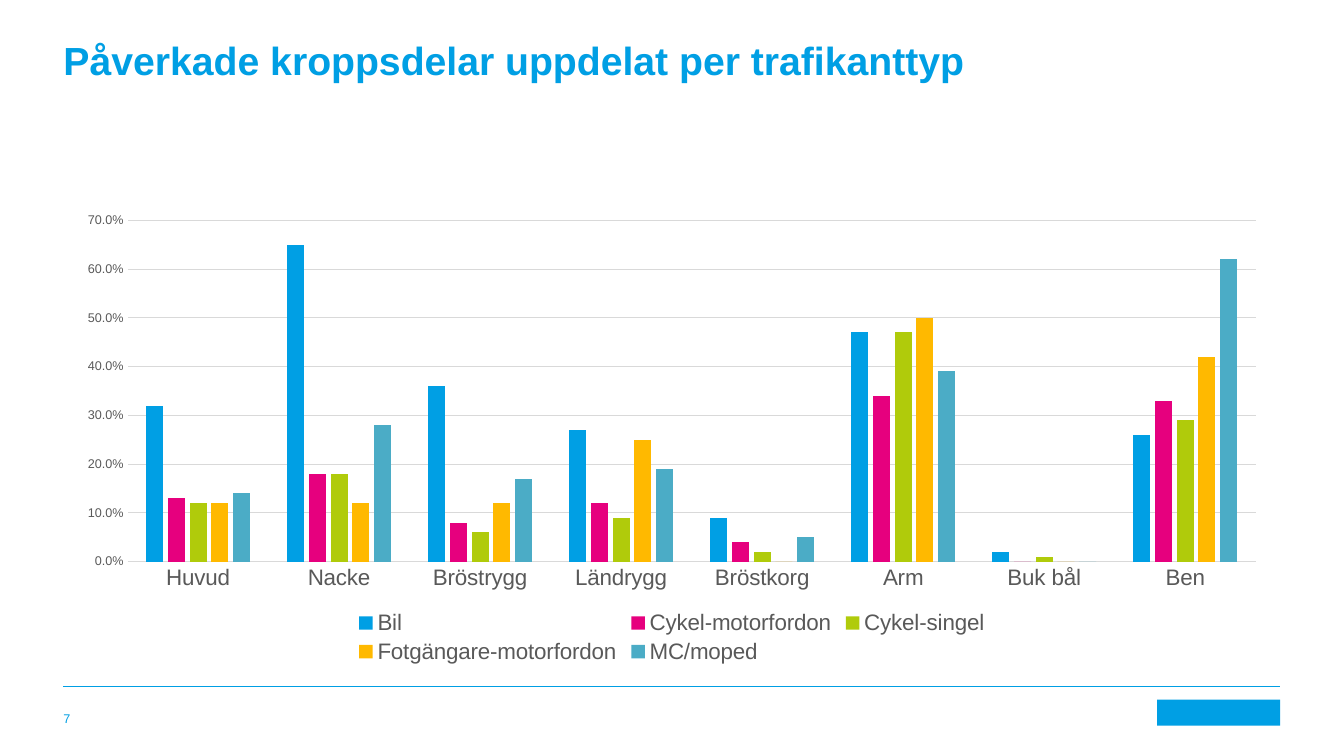
from dataclasses import dataclass

import lxml.etree
import pptx
import pptx.chart.data
import pptx.dml.color
import pptx.enum.chart
import pptx.enum.shapes
import pptx.enum.text
import pptx.oxml.ns
import pptx.util

Pt = pptx.util.Pt
Color = pptx.dml.color.RGBColor


@dataclass(frozen=True)
class Theme:
    font: str = "Arial"
    blue: str = "009FE4"
    text_grey: str = "595959"
    line_grey: str = "D9D9D9"
    title_size: float = 28
    number_size: float = 9
    value_size: float = 9
    label_size: float = 16
    chart_size: float = 10
    rule_width: float = 0.5
    grid_width: float = 0.75


@dataclass(frozen=True)
class Box:
    left: float
    top: float
    width: float
    height: float

    def lengths(self) -> tuple:
        return Pt(self.left), Pt(self.top), Pt(self.width), Pt(self.height)


@dataclass(frozen=True)
class Label:
    text: str
    box: Box
    size: float
    bold: bool
    anchor: pptx.enum.text.MSO_ANCHOR


@dataclass(frozen=True)
class RoadUser:
    name: str
    color: str
    shares: tuple[float, ...]


THEME = Theme()
LEFT, WIDTH = 45.36, 869.04
RULE_TOP = 490.32
FOOTER_TOP, FOOTER_HEIGHT = 499.68, 18.72
CHART_BOX = Box(LEFT, 145.44, WIDTH, 331.92)
LOGO_BOX = Box(826.56, FOOTER_TOP, 87.84, FOOTER_HEIGHT)

LABELS = (
    Label("Påverkade kroppsdelar uppdelat per trafikanttyp", Box(LEFT, 25.92, WIDTH, 118.8),
          THEME.title_size, True, pptx.enum.text.MSO_ANCHOR.TOP),
    Label("7", Box(LEFT, FOOTER_TOP, 41.76, FOOTER_HEIGHT),
          THEME.number_size, False, pptx.enum.text.MSO_ANCHOR.BOTTOM),
)

BODY_PARTS = ("Huvud", "Nacke", "Bröstrygg", "Ländrygg", "Bröstkorg", "Arm", "Buk bål", "Ben")
ROAD_USERS = (
    RoadUser("Bil", THEME.blue, (0.32, 0.65, 0.36, 0.27, 0.09, 0.47, 0.02, 0.26)),
    RoadUser("Cykel-motorfordon", "E6007E", (0.13, 0.18, 0.08, 0.12, 0.04, 0.34, 0, 0.33)),
    RoadUser("Cykel-singel", "B0CB0B", (0.12, 0.18, 0.06, 0.09, 0.02, 0.47, 0.01, 0.29)),
    RoadUser("Fotgängare-motorfordon", "FFB900", (0.12, 0.12, 0.12, 0.25, 0, 0.5, 0, 0.42)),
    RoadUser("MC/moped", "4BACC6", (0.14, 0.28, 0.17, 0.19, 0.05, 0.39, 0, 0.62)),
)


def apply_format(target: object, values: dict) -> None:
    for name, value in values.items():
        setattr(target, name, value)


def style_font(font: pptx.text.text.Font, size: float, color: str, bold: bool = False) -> None:
    apply_format(font, {"name": THEME.font, "size": Pt(size), "bold": bold})
    font.color.rgb = Color.from_string(color)


def style_line(line: pptx.dml.line.LineFormat, color: str, width: float) -> None:
    line.color.rgb = Color.from_string(color)
    line.width = Pt(width)


def fill_solid(fill: pptx.dml.fill.FillFormat, color: str) -> None:
    fill.solid()
    fill.fore_color.rgb = Color.from_string(color)


def add_label(slide: pptx.slide.Slide, label: Label) -> None:
    frame = slide.shapes.add_textbox(*label.box.lengths()).text_frame
    apply_format(frame, {
        "margin_left": 0, "margin_top": 0, "margin_right": 0, "margin_bottom": 0,
        "word_wrap": True, "vertical_anchor": label.anchor,
    })
    run = frame.paragraphs[0].add_run()
    run.text = label.text
    style_font(run.font, label.size, THEME.blue, label.bold)


def add_footer(slide: pptx.slide.Slide) -> None:
    rule = slide.shapes.add_connector(
        pptx.enum.shapes.MSO_CONNECTOR.STRAIGHT,
        Pt(LEFT), Pt(RULE_TOP), Pt(LEFT + WIDTH), Pt(RULE_TOP))
    style_line(rule.line, THEME.blue, THEME.rule_width)
    lxml.etree.SubElement(rule.element.spPr, pptx.oxml.ns.qn("a:effectLst"))
    logo = slide.shapes.add_shape(pptx.enum.shapes.MSO_SHAPE.RECTANGLE, *LOGO_BOX.lengths())
    fill_solid(logo.fill, THEME.blue)
    logo.line.fill.background()
    logo.shadow.inherit = False


def add_injury_chart(slide: pptx.slide.Slide) -> None:
    data = pptx.chart.data.CategoryChartData(number_format="0.0%")
    data.categories = BODY_PARTS
    for user in ROAD_USERS:
        data.add_series(user.name, user.shares)
    chart = slide.shapes.add_chart(
        pptx.enum.chart.XL_CHART_TYPE.COLUMN_CLUSTERED, *CHART_BOX.lengths(), data).chart
    apply_format(chart, {"has_title": False, "has_legend": True})
    style_font(chart.font, THEME.chart_size, "000000")

    apply_format(chart.legend, {
        "position": pptx.enum.chart.XL_LEGEND_POSITION.BOTTOM, "include_in_layout": False,
    })
    style_font(chart.legend.font, THEME.label_size, THEME.text_grey)

    plot = chart.plots[0]
    apply_format(plot, {"gap_width": 219, "overlap": -27, "vary_by_categories": False})
    for series, user in zip(plot.series, ROAD_USERS):
        fill_solid(series.format.fill, user.color)
        series.invert_if_negative = False

    no_tick = pptx.enum.chart.XL_TICK_MARK.NONE
    for axis, size in ((chart.category_axis, THEME.label_size),
                       (chart.value_axis, THEME.value_size)):
        apply_format(axis, {"major_tick_mark": no_tick, "minor_tick_mark": no_tick})
        style_font(axis.tick_labels.font, size, THEME.text_grey)
    style_line(chart.category_axis.format.line, THEME.line_grey, THEME.grid_width)

    value_axis = chart.value_axis
    apply_format(value_axis, {
        "minimum_scale": 0, "maximum_scale": 0.7, "major_unit": 0.1, "has_major_gridlines": True,
    })
    apply_format(value_axis.tick_labels, {
        "number_format": "0.0%", "number_format_is_linked": False,
    })
    value_axis.format.line.fill.background()
    style_line(value_axis.major_gridlines.format.line, THEME.line_grey, THEME.grid_width)


def main() -> None:
    presentation = pptx.Presentation()
    apply_format(presentation, {"slide_width": Pt(960), "slide_height": Pt(540)})
    slide = presentation.slides.add_slide(presentation.slide_layouts[6])
    add_footer(slide)
    for label in LABELS:
        add_label(slide, label)
    add_injury_chart(slide)
    presentation.save("out.pptx")


if __name__ == "__main__":
    main()
